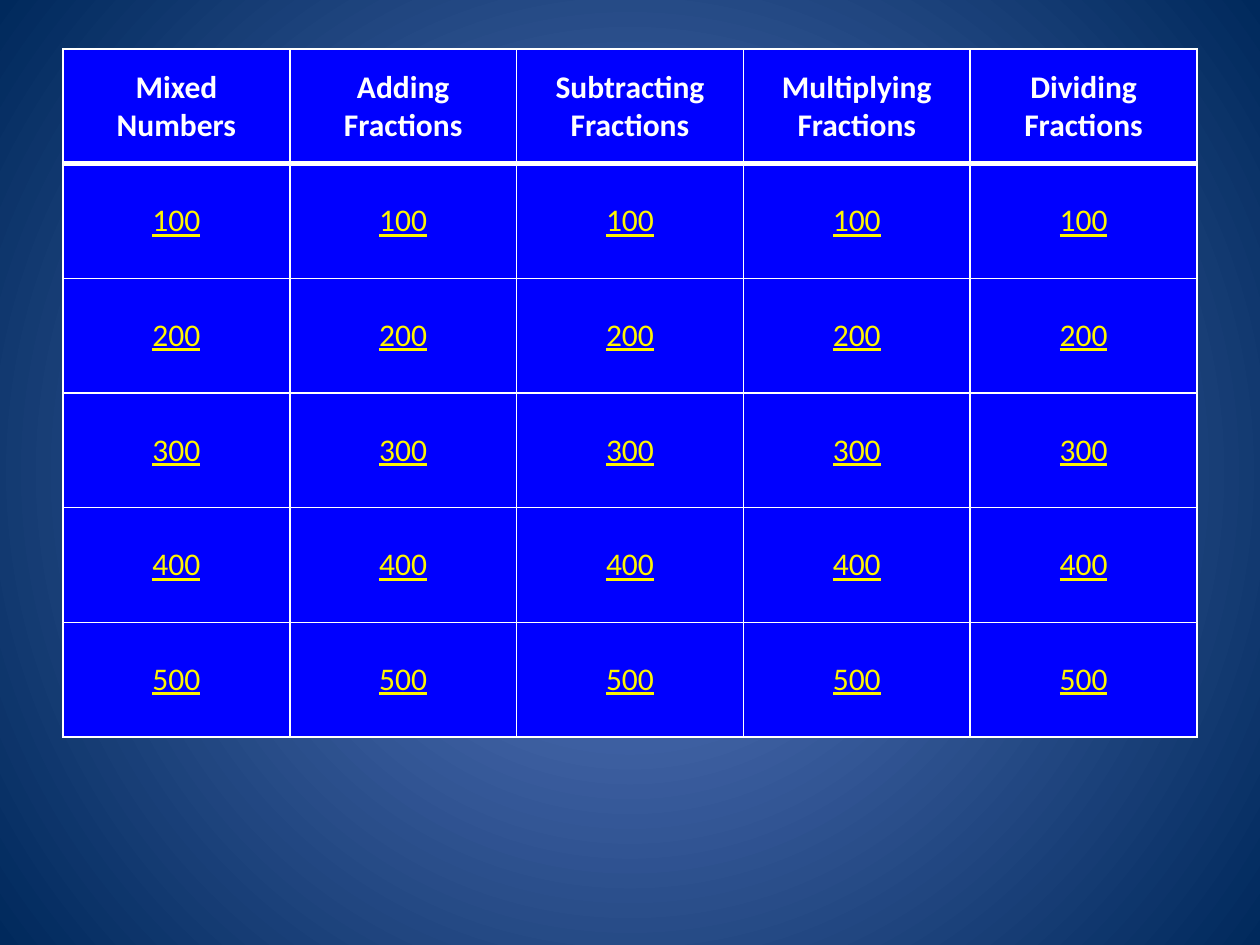
from dataclasses import dataclass

from lxml import etree
from pptx import Presentation
from pptx import util as u
from pptx.dml.color import RGBColor
from pptx.enum import text
from pptx.oxml import ns


@dataclass(frozen=True)
class Theme:
    font: str = "Calibri"
    size: int = 18
    glow: str = "5E7CC5"
    edge: str = "00295C"
    tile: str = "0000FF"
    heading: str = "FFFFFF"
    points: str = "FFF500"
    border: str = "FFFFFF"
    thin: int = 1
    thick: int = 3


THEME = Theme()
TOPICS = ["Mixed Numbers", "Adding Fractions", "Subtracting Fractions",
          "Multiplying Fractions", "Dividing Fractions"]
POINTS = range(100, 600, 100)
COLUMN_WIDTH = 1.8
ROW_HEIGHT = 0.91


def paint_background(page):
    fill = page.background.fill
    fill.gradient()
    for stop, color, position in zip(fill.gradient_stops, (THEME.glow, THEME.edge), (0, 1)):
        stop.color.rgb = RGBColor.from_string(color)
        stop.position = position
    gradient = page.element.find(".//" + ns.qn("a:gradFill"))
    gradient.remove(gradient.find(ns.qn("a:lin")))
    radial = etree.SubElement(gradient, ns.qn("a:path"), path="circle")
    etree.SubElement(radial, ns.qn("a:fillToRect"), l="50000", t="50000", r="50000", b="50000")


def set_borders(cell, **widths):
    properties = cell._tc.get_or_add_tcPr()
    for index, side in enumerate("LRTB"):
        width = u.Pt(widths.get(side, THEME.thin))
        line = etree.Element(ns.qn(f"a:ln{side}"), w=str(int(width)))
        solid = etree.SubElement(line, ns.qn("a:solidFill"))
        etree.SubElement(solid, ns.qn("a:srgbClr"), val=THEME.border)
        properties.insert(index, line)


def write(cell, content, *, color, bold=False, underline=False):
    cell.vertical_anchor = text.MSO_ANCHOR.MIDDLE
    para = cell.text_frame.paragraphs[0]
    para.alignment = text.PP_ALIGN.CENTER
    span = para.add_run()
    span.text = content
    span.font.name = THEME.font
    span.font.size = u.Pt(THEME.size)
    span.font.color.rgb = RGBColor.from_string(color)
    span.font.bold = bold
    span.font.underline = underline


def fill_tile(cell):
    cell.fill.solid()
    cell.fill.fore_color.rgb = RGBColor.from_string(THEME.tile)


def add_board(page):
    rows, columns = len(POINTS) + 1, len(TOPICS)
    board = page.shapes.add_table(
        rows, columns, u.Inches(0.5), u.Inches(0.39),
        u.Inches(columns * COLUMN_WIDTH), u.Inches(rows * ROW_HEIGHT)).table
    for column in board.columns:
        column.width = u.Inches(COLUMN_WIDTH)
    for row in board.rows:
        row.height = u.Inches(ROW_HEIGHT)
    for column, topic in enumerate(TOPICS):
        heading = board.cell(0, column)
        fill_tile(heading)
        set_borders(heading, B=THEME.thick)
        write(heading, topic, color=THEME.heading, bold=True)
        for row, points in enumerate(POINTS, start=1):
            tile = board.cell(row, column)
            fill_tile(tile)
            set_borders(tile, T=THEME.thick if row == 1 else THEME.thin)
            write(tile, str(points), color=THEME.points, underline=True)


def main():
    deck = Presentation()
    deck.slide_width, deck.slide_height = u.Inches(10), u.Inches(7.5)
    page = deck.slides.add_slide(deck.slide_layouts[6])
    paint_background(page)
    add_board(page)
    deck.save("out.pptx")


if __name__ == "__main__":
    main()
